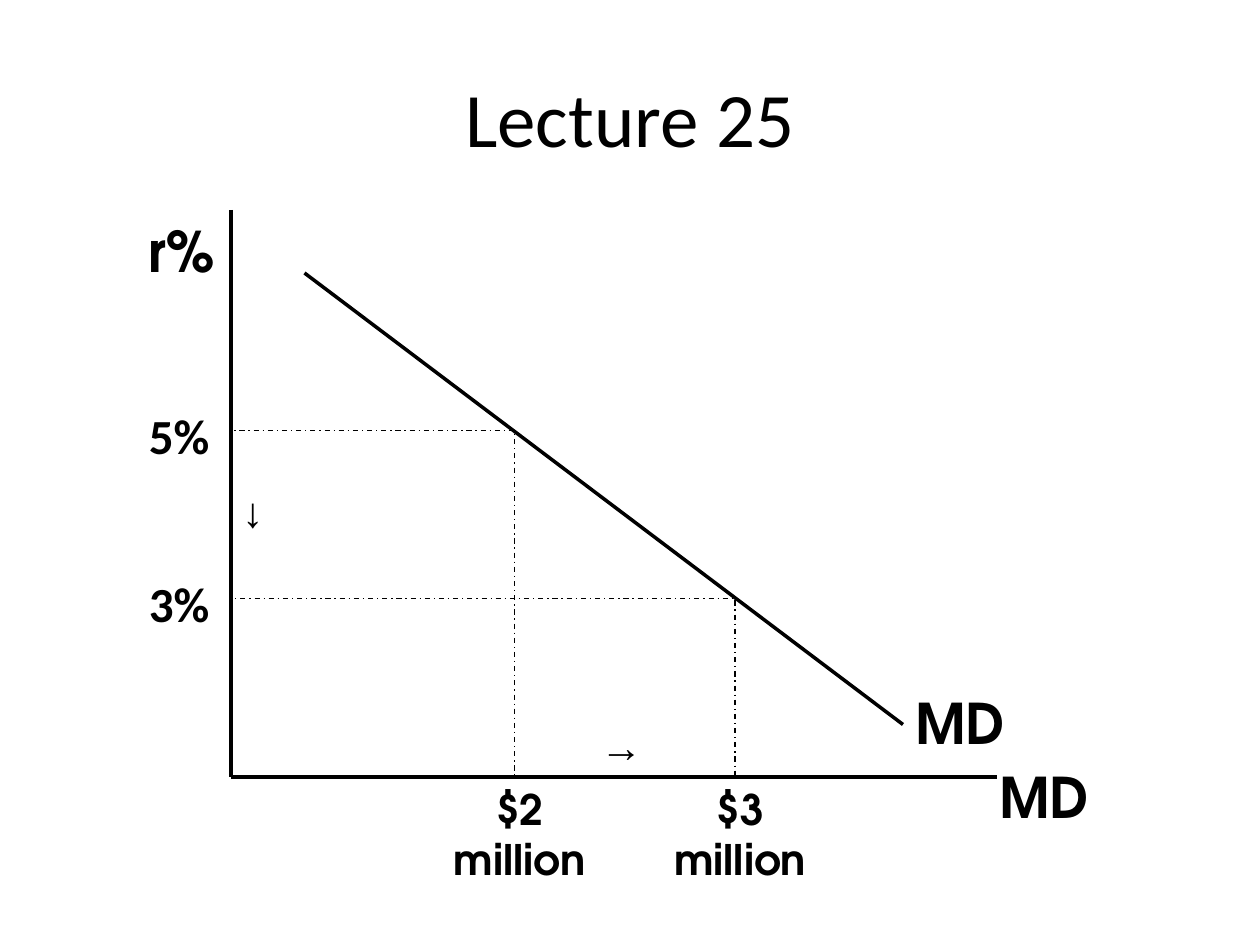
from dataclasses import dataclass

from lxml import etree
from pptx import Presentation
from pptx.dml.color import RGBColor
from pptx.enum import dml, shapes, text
from pptx.oxml.ns import qn
from pptx.util import Pt

BLACK = RGBColor(0x00, 0x00, 0x00)
DISPLAY, BODY, SYMBOL = "TeX Gyre Adventor", "Calibri", "Times New Roman"
ORIGIN_X, ORIGIN_Y = 132, 444


@dataclass(frozen=True)
class Line:
    x1: float
    y1: float
    x2: float
    y2: float
    weight: float


@dataclass(frozen=True)
class Label:
    words: str
    left: float
    top: float
    width: float
    height: float
    size: float
    font: str = DISPLAY
    bold: bool = True
    centred: bool = False
    wrap: bool = True
    rotation: float = 0


@dataclass(frozen=True)
class DemandPoint:
    x: float
    y: float
    rate: str
    quantity: str


LINES = [
    Line(ORIGIN_X, 120, ORIGIN_X, ORIGIN_Y, 2.5),
    Line(ORIGIN_X, ORIGIN_Y, 570, ORIGIN_Y, 2.5),
    Line(174, 156, 516, 414, 2),
]
NAMES = [
    Label("r%", 78, 120, 54, 45.5, 32),
    Label("MD", 564, 432, 66, 45.5, 32),
    Label("MD", 516, 390, 72, 45.5, 32),
]
POINTS = [
    DemandPoint(294, 246, "5%", "$2 million"),
    DemandPoint(420, 342, "3%", "$3 million"),
]
ARROWS = [
    Label("→", 129, 279, 42, 36, 24, SYMBOL, bold=False, rotation=90),
    Label("→", 336, 408, 38, 36, 24, SYMBOL, bold=False, wrap=False),
]


def add_run(p, words: str, size: float, font: str, bold: bool) -> None:
    r = p.add_run()
    r.text = words
    r.font.size = Pt(size)
    r.font.name = font
    r.font.bold = bold
    r.font.color.rgb = BLACK


def draw_line(s, line: Line) -> None:
    sp = s.shapes.add_connector(
        shapes.MSO_CONNECTOR.STRAIGHT,
        Pt(line.x1), Pt(line.y1), Pt(line.x2), Pt(line.y2))
    sp.line.color.rgb = BLACK
    sp.line.width = Pt(line.weight)
    etree.SubElement(sp._element.spPr, qn("a:effectLst"))


def draw_label(s, label: Label) -> None:
    sp = s.shapes.add_textbox(
        Pt(label.left), Pt(label.top), Pt(label.width), Pt(label.height))
    sp.rotation = label.rotation
    tf = sp.text_frame
    tf.word_wrap = label.wrap
    tf.auto_size = text.MSO_AUTO_SIZE.SHAPE_TO_FIT_TEXT
    p = tf.paragraphs[0]
    p.alignment = text.PP_ALIGN.CENTER if label.centred else text.PP_ALIGN.LEFT
    add_run(p, label.words, label.size, label.font, label.bold)


def draw_guide(s, point: DemandPoint) -> None:
    """Draw the dashed rectangle between the origin and a point on the curve."""
    sp = s.shapes.add_shape(
        shapes.MSO_SHAPE.RECTANGLE, Pt(ORIGIN_X), Pt(point.y),
        Pt(point.x - ORIGIN_X), Pt(ORIGIN_Y - point.y))
    sp.shadow.inherit = False
    sp.fill.background()
    sp.line.color.rgb = BLACK
    sp.line.width = Pt(0.75)
    sp.line.dash_style = dml.MSO_LINE.DASH_DOT


def draw_title(s, words: str) -> None:
    sp = s.shapes.title
    sp.left, sp.top, sp.width, sp.height = Pt(36), Pt(21.6), Pt(648), Pt(90)
    tf = sp.text_frame
    tf.vertical_anchor = text.MSO_ANCHOR.MIDDLE
    p = tf.paragraphs[0]
    p.alignment = text.PP_ALIGN.CENTER
    add_run(p, words, 44, BODY, False)


def main() -> None:
    prs = Presentation()
    prs.slide_width, prs.slide_height = Pt(720), Pt(540)
    s = prs.slides.add_slide(prs.slide_layouts[5])
    draw_title(s, "Lecture 25")
    for line in LINES:
        draw_line(s, line)
    for name in NAMES:
        draw_label(s, name)
    for point in POINTS:
        draw_guide(s, point)
        draw_label(s, Label(point.rate, 78, point.y - 18, 54, 41, 28, BODY,
                            wrap=False))
        draw_label(s, Label(point.quantity, point.x - 42, ORIGIN_Y, 90, 65.5, 24,
                            centred=True))
    for arrow in ARROWS:
        draw_label(s, arrow)
    prs.save("out.pptx")


if __name__ == "__main__":
    main()
